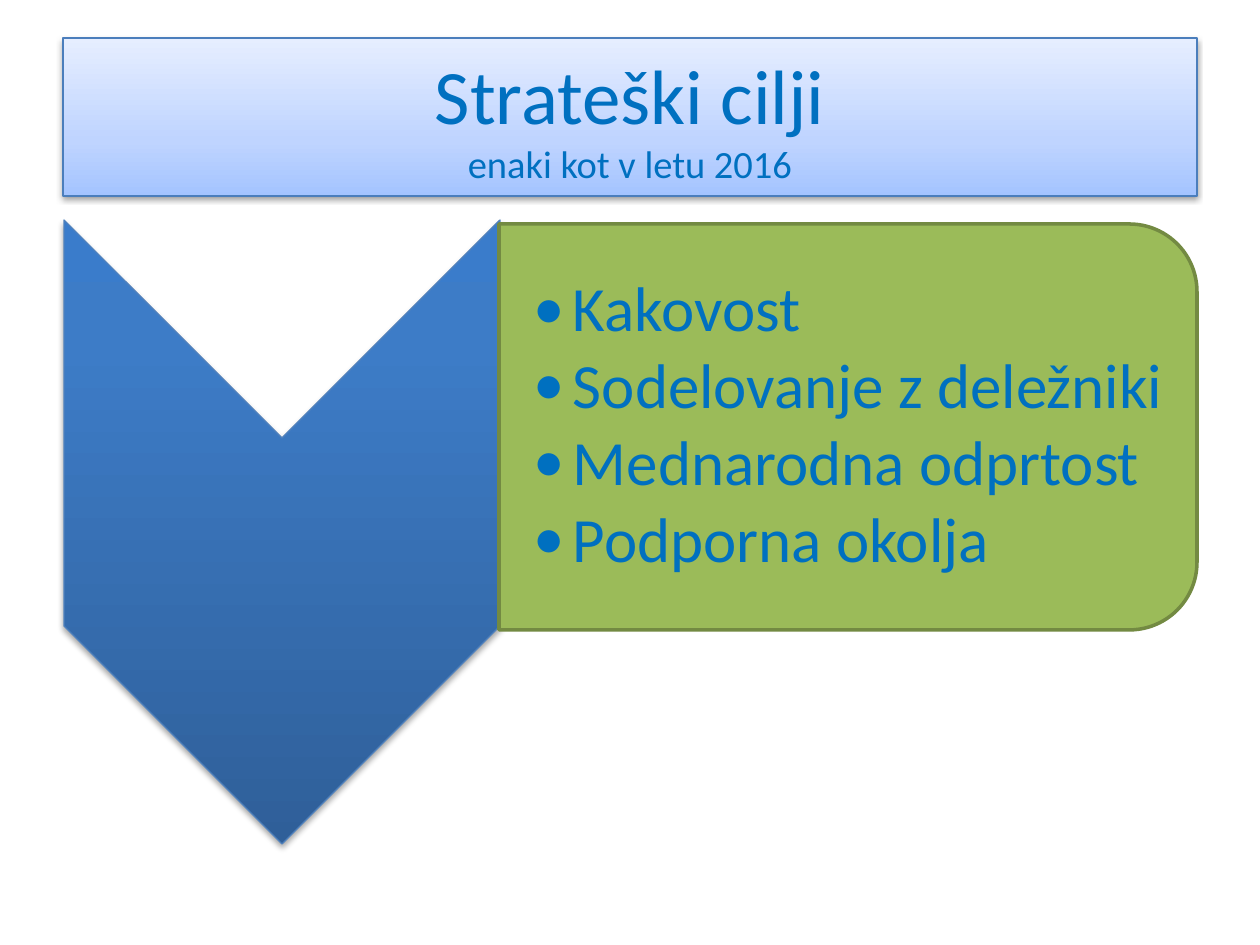
from lxml import etree
from pptx import Presentation
from pptx import util as u
from pptx.dml.color import RGBColor
from pptx.enum import shapes, text
from pptx.oxml import parse_xml
from pptx.oxml.ns import nsdecls, qn

PX = 914400 / 126  # EMU in one px
FONT = "Calibri"
COLORS = {
    "text": "0070C0", "title_line": "4B7EBC", "arrow_line": "4F81BD",
    "panel": "9BBB59", "panel_line": "738A42", "shadow": "000000",
}
TITLE_STOPS = [(0, "A4C4FF"), (35, "BFD4FF"), (100, "E6EEFF")]
ARROW_STOPS = [(0, "2F5F99"), (80, "3D7CC7"), (100, "3A7CCB")]
GOALS = ["Kakovost", "Sodelovanje z deležniki", "Mednarodna odprtost", "Podporna okolja"]


def px(value):
    return u.Emu(round(value * PX))


def rgb(name):
    return RGBColor.from_string(COLORS[name])


def add_block(slide, kind, box, line, line_width, fill=None, rotation=0):
    block = slide.shapes.add_shape(kind, *map(px, box))
    block.rotation = rotation
    block.shadow.inherit = False
    block.line.color.rgb = rgb(line)
    block.line.width = u.Pt(line_width)
    if fill:
        block.fill.solid()
        block.fill.fore_color.rgb = rgb(fill)
    return block


def set_gradient(block, stops):
    """Fill upwards from the first stop, whatever the rotation."""
    marks = "".join(f'<a:gs pos="{pos * 1000}"><a:srgbClr val="{color}"/></a:gs>'
                    for pos, color in stops)
    gradient = parse_xml(
        f'<a:gradFill {nsdecls("a")} rotWithShape="0"><a:gsLst>{marks}</a:gsLst>'
        '<a:lin ang="16200000" scaled="0"/></a:gradFill>')
    block._element.spPr.find(qn("a:prstGeom")).addnext(gradient)


def set_shadow(block, opacity, distance):
    effects = block._element.spPr.find(qn("a:effectLst"))
    effects.append(parse_xml(
        f'<a:outerShdw {nsdecls("a")} blurRad="{u.Pt(3.1)}" dist="{u.Pt(distance)}" '
        f'dir="5400000" rotWithShape="0"><a:srgbClr val="{COLORS["shadow"]}">'
        f'<a:alpha val="{opacity * 1000}"/></a:srgbClr></a:outerShdw>'))


def add_bullet(paragraph, indent):
    properties = paragraph._p.get_or_add_pPr()
    properties.set("marL", str(px(indent)))
    properties.set("indent", str(-px(indent)))
    etree.SubElement(properties, qn("a:buFont")).set("typeface", FONT)
    etree.SubElement(properties, qn("a:buChar")).set("char", "•")


def write_text(frame, paragraphs, align=text.PP_ALIGN.LEFT, bullet_indent=0,
               line_spacing=None, space_after=None):
    """Each paragraph is a list of (line, size) pairs."""
    frame.word_wrap = True
    frame.vertical_anchor = text.MSO_ANCHOR.MIDDLE
    for index, lines in enumerate(paragraphs):
        paragraph = frame.add_paragraph() if index else frame.paragraphs[0]
        if bullet_indent:
            add_bullet(paragraph, bullet_indent)
        paragraph.alignment = align
        paragraph.line_spacing = line_spacing
        paragraph.space_after = space_after
        for number, (line, size) in enumerate(lines):
            if number:
                paragraph.add_line_break()
            run = paragraph.add_run()
            run.text = line
            run.font.name = FONT
            run.font.size = u.Pt(size)
            run.font.color.rgb = rgb("text")


def add_title(slide):
    banner = add_block(slide, shapes.MSO_SHAPE.RECTANGLE, (63, 38, 1134, 158),
                       "title_line", 0.75)
    set_gradient(banner, TITLE_STOPS)
    set_shadow(banner, 38, 1.6)
    write_text(banner.text_frame,
               [[("Strateški cilji", 44), ("enaki kot v letu 2016", 22)]],
               align=text.PP_ALIGN.CENTER)


def add_arrow(slide):
    arrow = add_block(slide, shapes.MSO_SHAPE.CHEVRON, (-30, 314, 624, 436),
                      "arrow_line", 0.75, rotation=90)
    set_gradient(arrow, ARROW_STOPS)
    set_shadow(arrow, 35, 1.8)


def add_goals(slide):
    add_block(slide, shapes.MSO_SHAPE.ROUND_2_SAME_RECTANGLE, (645, 78, 406, 698),
              "panel_line", 2, fill="panel", rotation=90)
    frame = slide.shapes.add_textbox(*map(px, (499, 244, 678, 365))).text_frame
    frame.margin_left = px(35)
    frame.margin_top = frame.margin_right = frame.margin_bottom = px(4)
    write_text(frame, [[(goal, 36)] for goal in GOALS], bullet_indent=39,
               line_spacing=0.9, space_after=u.Pt(5))


def main():
    deck = Presentation()
    deck.slide_width, deck.slide_height = px(1260), px(945)
    slide = deck.slides.add_slide(deck.slide_layouts[6])
    add_title(slide)
    # Arrow on the left, goals on the right
    add_arrow(slide)
    add_goals(slide)
    deck.save("out.pptx")


if __name__ == "__main__":
    main()
